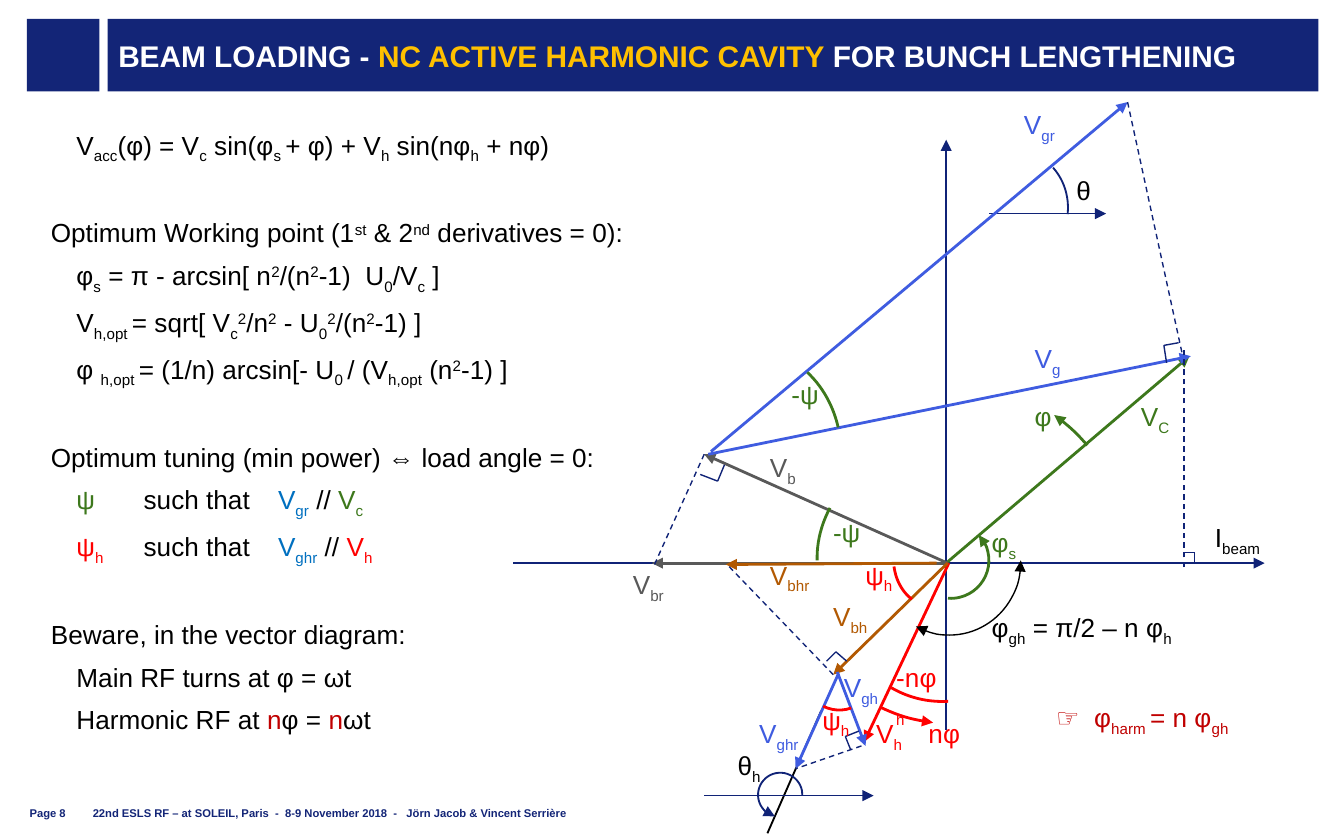
from lxml.etree import SubElement
from pptx import Presentation
from pptx.dml.color import RGBColor
from pptx.enum.dml import MSO_LINE
from pptx.enum.shapes import MSO_CONNECTOR, MSO_SHAPE as Shape
from pptx.enum.text import MSO_ANCHOR as Anchor, MSO_AUTO_SIZE as AutoSize
from pptx.oxml.ns import qn
from pptx.util import Cm, Pt

NAVY, AXIS, BLACK, WHITE = "132577", "102377", "000000", "FFFFFF"
GREEN, BLUE, GRAY, RED, BROWN = "3D781C", "3F5CE0", "595959", "FF0000", "B25902"
AMBER, SKY, DARK_RED = "FFC000", "0070C0", "C00000"

ORIGIN = (7.05, 4.19)
V_GR_TIP, V_B_TIP, V_BR_TIP = (8.39, 0.76), (5.24, 3.38), (4.85, 4.19)
V_BH_TIP, V_GHR_TIP = (6.2, 5.02), (5.92, 5.72)

BASELINES = {"_": "-25000", "^": "30000"}
TAB_STOPS = (0.59, 1.77)

# start, end, colour
VECTORS = [
    ((7.04, 4.19), (8.85, 2.65), GREEN),
    (ORIGIN, V_BR_TIP, GRAY),
    (ORIGIN, V_B_TIP, GRAY),
    ((5.29, 3.36), V_GR_TIP, BLUE),
    ((5.27, 3.38), (8.86, 2.65), BLUE),
    ((7.06, 4.19), (6.43, 5.52), RED),
    ((6.97, 4.19), (5.4, 4.2), BROWN),
    (ORIGIN, V_BH_TIP, BROWN),
    ((6.24, 5.01), V_GHR_TIP, BLUE),
    ((6.23, 5), (6.44, 5.55), BLUE),
]
PROJECTIONS = [
    ((8.81, 4.22), (8.81, 2.6)),
    ((4.87, 4.2), V_B_TIP),
    (V_GR_TIP, (8.8, 2.65)),
    (V_BH_TIP, (5.41, 4.2)),
    ((6.41, 5.55), V_GHR_TIP),
]
AXES = [
    ((3.82, 4.19), (9.41, 4.19)),
    ((7.04, 5.43), (7.04, 1.04)),
    ((7.36, 1.59), (8.23, 1.59)),
    ((5.24, 5.92), (6.5, 5.92)),
]
RIGHT_ANGLES = [
    ((6.33, 5.58), (6.29, 5.48), (6.39, 5.44)),
    ((6.15, 4.92), (6.22, 4.85), (6.3, 4.92)),
    ((8.68, 2.7), (8.66, 2.57), (8.77, 2.55)),
    ((5.21, 3.53), (5.34, 3.58), (5.39, 3.46)),
    ((8.81, 4.11), (8.89, 4.11), (8.89, 4.19)),
]
# box, rotation, arc adjustments, colour, width, arrowheads
ARCS = [
    ((4.92, 2.6, 1.34, 1.57), 0, (182.5, 205.49), GREEN, 1.5, ()),
    ((6.14, 3.25, 1.34, 1.57), 225.4, (182.5, 201.94), GREEN, 1.5, ()),
    ((6.65, 3.75, 0.65, 0.77), 189.6, (174.45, 201.94), RED, 1.5, ()),
    ((5.97, 4.74, 0.52, 0.55), 137, (174.45, 201.94), RED, 1.5, ()),
    ((6.52, 3.65, 1.09, 1.06), 90, (161.36, 16.49), BLACK, 0.75, ("headEnd", "tailEnd")),
    ((6.26, 3.72, 1.5, 1.5), 90, (213.95, 18.24), RED, 1.5, ()),
    ((6.8, 3.9, 0.56, 0.55), 136.5, (107.86, 191.42), GREEN, 1.5, ("headEnd",)),
    ((6.88, 3.17, 1.71, 1), 51.8, (137.29, 157.85), GREEN, 1.5, ("headEnd",)),
    ((5.88, 2.98, 2.37, 2.43), 114.2, (205.06, 0.75), RED, 1.5, ("headEnd",)),
    ((7, 1.08, 0.93, 0.99), 48.6, (162, 188.19), AXIS, 1, ()),
    ((5.64, 5.75, 0.33, 0.33), 48.6, (33.18, 188.19), AXIS, 1, ("headEnd",)),
]
# text, left, top, width, colour
LABELS = [
    ("-ψ", 5.79, 2.77, 0.47, GREEN),
    ("-ψ", 6.1, 3.79, 0.47, GREEN),
    ("ψ{_h}", 6.02, 5.19, 0.47, RED),
    ("ψ{_h}", 6.34, 4.11, 0.47, RED),
    ("I{_beam}", 8.94, 3.83, 0.79, BLACK),
    ("V{_br}", 4.61, 4.18, 0.55, GRAY),
    ("V{_b}", 5.63, 3.31, 0.55, GRAY),
    ("V{_gr}", 7.52, 0.76, 0.55, BLUE),
    ("V{_g}", 7.6, 2.5, 0.55, BLUE),
    ("V{_ghr}", 5.55, 5.29, 0.63, BLUE),
    ("V{_gh}", 6.18, 4.95, 0.55, BLUE),
    ("V{_h}", 6.42, 5.29, 0.55, RED),
    ("V{_C}", 8.39, 2.93, 0.55, GREEN),
    ("φ{_gh} = π/2 – n φ{_h}", 7.28, 4.5, 1.97, BLACK),
    ("-nφ{_h}", 6.57, 4.87, 0.55, RED),
    ("☞  φ{_harm }= n φ{_gh}", 7.76, 5.17, 1.57, DARK_RED),
    ("V{_bh}", 6.1, 4.42, 0.55, BROWN),
    ("V{_bhr}", 5.63, 4.11, 0.55, BROWN),
    ("φ{_s}", 7.28, 3.87, 0.55, GREEN),
    ("φ", 7.6, 2.93, 0.47, GREEN),
    ("nφ", 6.81, 5.29, 0.55, RED),
    ("θ", 7.91, 1.25, 0.31, BLACK),
    ("θ{_h}", 5.39, 5.53, 0.47, BLACK),
]
# text, whether it is a heading
EQUATIONS = [
    ("V{_acc}(φ) = V{_c} sin(φ{_s }+ φ) + V{_h} sin(nφ{_h} + nφ)", False),
    ("Optimum Working point (1{^st} & 2{^nd} derivatives = 0):", True),
    ("φ{_s} = π - arcsin[ n{^2}/(n{^2}-1)  U{_0}/V{_c} ]", False),
    ("V{_h,opt }= sqrt[ V{_c}{^2}/n{^2} - U{_0}{^2}/(n{^2}-1) ]", False),
    ("φ {_h,opt }= (1/n) arcsin[- U{_0 }/ (V{_h,opt} (n{^2}-1) ]", False),
    ("Optimum tuning (min power) ⇔ load angle = 0:", True),
    ([("ψ", GREEN), ("\tsuch that\t", BLACK), ("V{_gr}", SKY), (" // ", BLACK),
      ("V{_c}", GREEN)], False),
    ([("ψ{_h}", RED), ("\tsuch that\t", BLACK), ("V{_ghr}", SKY), (" // ", BLACK),
      ("V{_h}", RED)], False),
    ("Beware, in the vector diagram:", True),
    ("Main RF turns at φ = ωt", False),
    ([("Harmonic RF at ", BLACK), ("n", DARK_RED), ("φ = ", BLACK), ("n", DARK_RED),
      ("ωt", BLACK)], False),
]


def unit(value):
    """Length on the 10 by 6.25 grid of the slide."""
    return Cm(value * 2.54)


def rgb(color):
    return RGBColor.from_string(color)


def write(paragraph, text, color=BLACK, size=14, bold=False):
    """Write markup, or (markup, colour) pairs; {_x} is subscript, {^x} superscript."""
    for markup, run_color in [(text, color)] if isinstance(text, str) else text:
        for index, piece in enumerate(markup.replace("}", "{").split("{")):
            if not piece:
                continue
            run = paragraph.add_run()
            run.text = piece[1:] if index % 2 else piece
            run.font.name, run.font.size, run.font.bold = "Arial", Pt(size), bold
            run.font.color.rgb = rgb(run_color)
            if index % 2:
                run.font._element.set("baseline", BASELINES[piece[0]])


def add_text(slide, box, text=None, **text_format):
    shape = slide.shapes.add_textbox(*map(unit, box))
    frame = shape.text_frame
    frame.word_wrap = True
    frame.auto_size = AutoSize.SHAPE_TO_FIT_TEXT
    if text:
        write(frame.paragraphs[0], text, **text_format)
    return frame


def add_footer(slide, box, text):
    frame = add_text(slide, box, text, color=NAVY, size=6, bold=True)
    frame.auto_size = AutoSize.NONE
    frame.vertical_anchor = Anchor.BOTTOM
    frame.margin_left = frame.margin_right = frame.margin_top = frame.margin_bottom = 0


def add_bar(slide, box):
    shape = slide.shapes.add_shape(Shape.RECTANGLE, *map(unit, box))
    shape.shadow.inherit = False
    shape.fill.solid()
    shape.fill.fore_color.rgb = rgb(NAVY)
    shape.line.fill.background()
    return shape.text_frame


def style_line(shape, color, width, ends=()):
    shape.line.color.rgb = rgb(color)
    shape.line.width = Pt(width)
    for end in ends:
        SubElement(shape.line._get_or_add_ln(), qn("a:" + end), type="triangle")


def add_line(slide, start, end, color=AXIS, width=0.75, dashed=False, arrow=False):
    line = slide.shapes.add_connector(MSO_CONNECTOR.STRAIGHT, *map(unit, start + end))
    if dashed:
        line.line.dash_style = MSO_LINE.DASH
    style_line(line, color, width, ("tailEnd",) if arrow else ())
    SubElement(line._element.spPr, qn("a:effectLst"))


def add_arc(slide, box, rotation, angles, color, width, ends):
    arc = slide.shapes.add_shape(Shape.ARC, *map(unit, box))
    arc.shadow.inherit = False
    arc.rotation = rotation
    arc.adjustments[0], arc.adjustments[1] = angles
    arc.fill.background()
    style_line(arc, color, width, ends)


def add_equations(slide):
    frame = add_text(slide, (0.28, 0.91, 4.65, 4.49))
    for index, (text, heading) in enumerate(EQUATIONS):
        paragraph = frame.add_paragraph() if index else frame.paragraphs[0]
        paragraph.space_after = Pt(6)
        if heading:
            paragraph.space_before = Pt(22)
        else:
            properties = paragraph._p.get_or_add_pPr()
            properties.set("marL", str(unit(0.19)))
            properties.set("indent", "0")
            tabs = SubElement(properties, qn("a:tabLst"))
            for stop in TAB_STOPS:
                SubElement(tabs, qn("a:tab"), pos=str(unit(stop)), algn="l")
        write(paragraph, text)


def add_diagram(slide):
    add_line(slide, (6.11, 5.29), (5.71, 6.2), BLACK, 1)
    for start, end in AXES:
        add_line(slide, start, end, arrow=True)
    for start, end, color in VECTORS:
        add_line(slide, start, end, color, 1.5, arrow=True)
    for start, end in PROJECTIONS:
        add_line(slide, start, end, dashed=True)
    for start, corner, end in RIGHT_ANGLES:
        add_line(slide, start, corner)
        add_line(slide, corner, end)
    for arc in ARCS:
        add_arc(slide, *arc)
    for text, left, top, width, color in LABELS:
        add_text(slide, (left, top, width, 0.34), text, color=color)


def main():
    presentation = Presentation()
    presentation.slide_width, presentation.slide_height = unit(10), unit(6.25)
    slide = presentation.slides.add_slide(presentation.slide_layouts[6])
    add_bar(slide, (0.2, 0.14, 0.54, 0.54))
    title = add_bar(slide, (0.8, 0.14, 9.01, 0.54))
    title.margin_left = title.margin_right = unit(0.08)
    title.margin_top = title.margin_bottom = 0
    title.vertical_anchor = Anchor.MIDDLE
    title.paragraphs[0].alignment = 1
    write(title.paragraphs[0], [("BEAM LOADING - ", WHITE),
                                ("NC ACTIVE HARMONIC CAVITY ", AMBER),
                                ("FOR BUNCH LENGTHENING", WHITE)], size=16, bold=True)
    add_footer(slide, (0.22, 5.91, 0.45, 0.19), "Page 8")
    add_footer(slide, (0.69, 5.91, 6.69, 0.19),
               "22nd ESLS RF – at SOLEIL, Paris  -  8-9 November 2018  -   "
               "Jörn Jacob & Vincent Serrière")
    add_equations(slide)
    add_diagram(slide)
    presentation.save("out.pptx")


if __name__ == "__main__":
    main()
